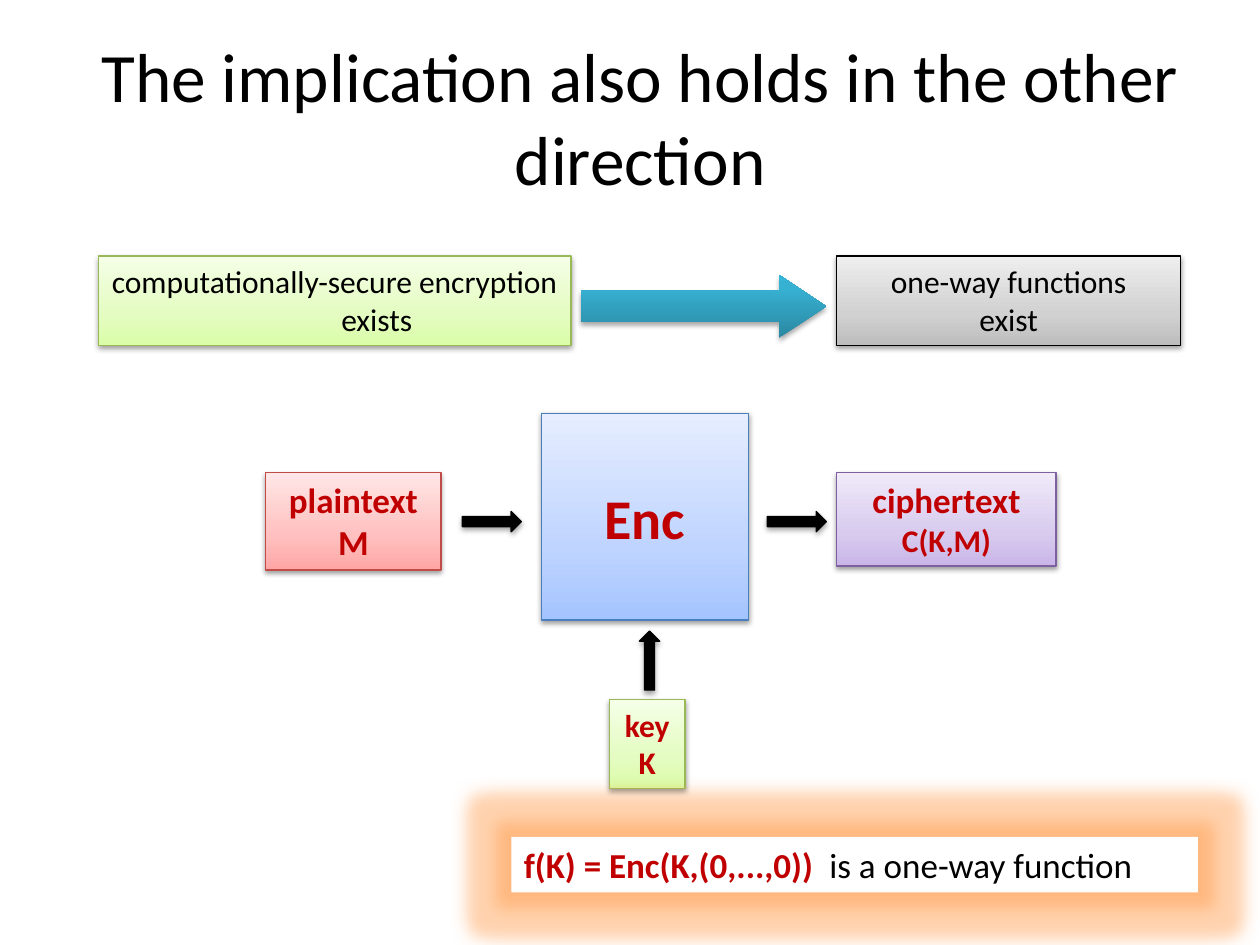
from copy import deepcopy
from dataclasses import dataclass

from lxml.etree import SubElement
from pptx import Presentation
from pptx.dml.color import RGBColor
from pptx.enum.shapes import MSO_SHAPE
from pptx.enum.text import MSO_ANCHOR, MSO_AUTO_SIZE, PP_ALIGN
from pptx.oxml.ns import qn
from pptx.shapes.autoshape import Shape
from pptx.slide import Slide
from pptx.util import Cm, Pt

Gradient = tuple[tuple[float, str], ...]


@dataclass(frozen=True)
class Theme:
    font: str = "Calibri"
    title: float = 39.6
    symbol: float = 32
    label: float = 20
    body: float = 18
    line: float = 0.75
    ink: str = "000000"
    accent: str = "C00000"
    paper: str = "FFFFFF"
    glow: str = "FF9139"
    gray: Gradient = ((0, "BDBDBD"), (0.35, "D1D1D1"), (1, "EEEEEE"))
    green: Gradient = ((0, "DAFDA7"), (0.35, "E4FCC2"), (1, "F5FFE7"))
    blue: Gradient = ((0, "A4C4FF"), (0.35, "BFD4FF"), (1, "E6EEFF"))
    red: Gradient = ((0, "FFA6A5"), (0.35, "FFC0BF"), (1, "FFE7E7"))
    purple: Gradient = ((0, "C9B5E8"), (0.35, "D8CBEE"), (1, "F0EAF9"))
    teal: Gradient = ((0, "2A88A2"), (0.8, "37B1D2"), (1, "34B4D6"))
    green_edge: str = "98B955"
    blue_edge: str = "4B7EBC"
    red_edge: str = "BF4C48"
    purple_edge: str = "7D60A0"


THEME = Theme()


@dataclass(frozen=True)
class Area:
    """Left, top, width and height in centimetres."""
    left: float
    top: float
    width: float
    height: float

    def lengths(self) -> tuple[Cm, Cm, Cm, Cm]:
        return Cm(self.left), Cm(self.top), Cm(self.width), Cm(self.height)


@dataclass(frozen=True)
class Span:
    text: str
    size: float = THEME.body
    color: str = THEME.accent
    bold: bool = True
    new_line: bool = False


def plain(text: str, size: float = THEME.body) -> Span:
    return Span(text, size, THEME.ink, False)


@dataclass(frozen=True)
class Box:
    area: Area
    fill: Gradient
    edge: str
    paragraphs: tuple[tuple[Span, ...], ...]
    hanging: bool = False
    wrap: bool = True
    grow: bool = True


@dataclass(frozen=True)
class Arrow:
    area: Area
    fill: Gradient | str = THEME.ink
    edge: str | None = THEME.ink
    rotation: float = 0


STATEMENT_TOP, STATEMENT_HEIGHT = 5.16, 1.8
MESSAGE_TOP = 9.53
RIGHT_COLUMN = 16.87
ARROW_TOP, ARROW_LENGTH, ARROW_WIDTH = 10.31, 1.19, 0.41

BOXES = (
    Box(Area(RIGHT_COLUMN, STATEMENT_TOP, 6.93, STATEMENT_HEIGHT), THEME.gray, THEME.ink,
        ((plain("one-way functions"),), (plain("exist"),)), hanging=True),
    Box(Area(1.98, STATEMENT_TOP, 9.53, STATEMENT_HEIGHT), THEME.green, THEME.green_edge,
        ((plain("computationally-secure encryption exists"),),), hanging=True),
    Box(Area(10.92, 8.33, 4.17, 4.17), THEME.blue, THEME.blue_edge,
        ((Span("Enc", THEME.symbol),),), grow=False),
    Box(Area(12.29, 14.1, 1.52, 1.8), THEME.green, THEME.green_edge,
        ((Span("key"), Span("K", new_line=True)),), wrap=False),
    Box(Area(5.36, MESSAGE_TOP, 3.53, 1.96), THEME.red, THEME.red_edge,
        ((Span("plaintext M", THEME.label),),)),
    Box(Area(RIGHT_COLUMN, MESSAGE_TOP, 4.42, 1.88), THEME.purple, THEME.purple_edge,
        ((Span("ciphertext", THEME.label), Span("C(K,M)", new_line=True)),)),
)

ARROWS = (
    Arrow(Area(11.71, 5.54, 4.95, 1.27), THEME.teal, None),
    Arrow(Area(9.32, ARROW_TOP, ARROW_LENGTH, ARROW_WIDTH)),
    Arrow(Area(15.47, ARROW_TOP, ARROW_LENGTH, ARROW_WIDTH)),
    Arrow(Area(12.5, 13.11, ARROW_LENGTH, ARROW_WIDTH), rotation=270),
)


def paint(shape: Shape, fill: Gradient | str, edge: str | None) -> None:
    if isinstance(fill, str):
        shape.fill.solid()
        shape.fill.fore_color.rgb = RGBColor.from_string(fill)
    else:
        shape.fill.gradient()
        shape.fill.gradient_angle = 90
        stop_list = next(shape._element.spPr.iter(qn("a:gsLst")))
        stop_list.append(deepcopy(stop_list[0]))
        for stop, (position, color) in zip(shape.fill.gradient_stops, fill):
            stop.position = position
            stop.color.rgb = RGBColor.from_string(color)
    if edge is None:
        shape.line.fill.background()
    else:
        shape.line.color.rgb = RGBColor.from_string(edge)
        shape.line.width = Pt(THEME.line)


def add_effect(shape: Shape, tag: str, color: str, opacity: int, **settings: int) -> None:
    """Put one effect, such as a shadow or a glow, on the shape."""
    shape.shadow.inherit = False
    effects = shape._element.spPr.find(qn("a:effectLst"))
    effect = SubElement(effects, qn(tag), {key: str(value) for key, value in settings.items()})
    tint = SubElement(effect, qn("a:srgbClr"), val=color)
    SubElement(tint, qn("a:alpha"), val=str(opacity * 1000))


def add_shadow(shape: Shape, distance: float, opacity: int) -> None:
    add_effect(shape, "a:outerShdw", THEME.ink, opacity, blurRad=Pt(3.1),
               dist=Pt(distance), dir=90 * 60000, rotWithShape=0)


def write(shape: Shape, paragraphs: tuple[tuple[Span, ...], ...], align: PP_ALIGN,
          anchor: MSO_ANCHOR, wrap: bool = True, grow: bool = False,
          hanging: bool = False) -> None:
    frame = shape.text_frame
    frame.word_wrap = wrap
    frame.auto_size = MSO_AUTO_SIZE.SHAPE_TO_FIT_TEXT if grow else MSO_AUTO_SIZE.NONE
    frame.vertical_anchor = anchor
    for index, spans in enumerate(paragraphs):
        paragraph = frame.add_paragraph() if index else frame.paragraphs[0]
        paragraph.alignment = align
        if hanging:
            properties = paragraph._p.get_or_add_pPr()
            properties.set("marL", str(Cm(1.7)))
            properties.set("indent", str(-Cm(1.7)))
        for span in spans:
            if span.new_line:
                paragraph.add_line_break()
            run = paragraph.add_run()
            run.text = span.text
            run.font.name = THEME.font
            run.font.size = Pt(span.size)
            run.font.bold = span.bold
            run.font.color.rgb = RGBColor.from_string(span.color)


def draw_title(slide: Slide) -> None:
    title = slide.shapes.add_textbox(*Area(0.99, 0.76, 23.83, 3.18).lengths())
    write(title, ((plain("The implication also holds in the other direction", THEME.title),),),
          PP_ALIGN.CENTER, MSO_ANCHOR.MIDDLE)


def draw_box(slide: Slide, box: Box) -> None:
    shape = slide.shapes.add_shape(MSO_SHAPE.RECTANGLE, *box.area.lengths())
    paint(shape, box.fill, box.edge)
    add_shadow(shape, 1.6, 38)
    write(shape, box.paragraphs, PP_ALIGN.CENTER,
          MSO_ANCHOR.TOP if box.grow else MSO_ANCHOR.MIDDLE, box.wrap, box.grow, box.hanging)


def draw_arrow(slide: Slide, arrow: Arrow) -> None:
    shape = slide.shapes.add_shape(MSO_SHAPE.RIGHT_ARROW, *arrow.area.lengths())
    shape.rotation = arrow.rotation
    if arrow.edge is None:
        shape.adjustments[1] = 0.75
    paint(shape, arrow.fill, arrow.edge)
    add_shadow(shape, 1.8, 35)


def draw_conclusion(slide: Slide) -> None:
    conclusion = slide.shapes.add_shape(
        MSO_SHAPE.RECTANGLE, *Area(10.31, 16.87, 13.84, 1.12).lengths())
    paint(conclusion, THEME.paper, None)
    add_effect(conclusion, "a:glow", THEME.glow, 40, rad=Pt(18))
    write(conclusion, ((Span("f(K) = Enc(K,(0,...,0))  ", THEME.label),
                        plain("is a one-way function", THEME.label)),),
          PP_ALIGN.LEFT, MSO_ANCHOR.TOP, wrap=False, grow=True)


def main() -> None:
    deck = Presentation()
    deck.slide_width, deck.slide_height = Cm(25.4), Cm(19.05)
    slide = deck.slides.add_slide(deck.slide_layouts[6])
    draw_title(slide)
    for box in BOXES:
        draw_box(slide, box)
    for arrow in ARROWS:
        draw_arrow(slide, arrow)
    draw_conclusion(slide)
    deck.save("out.pptx")


if __name__ == "__main__":
    main()
